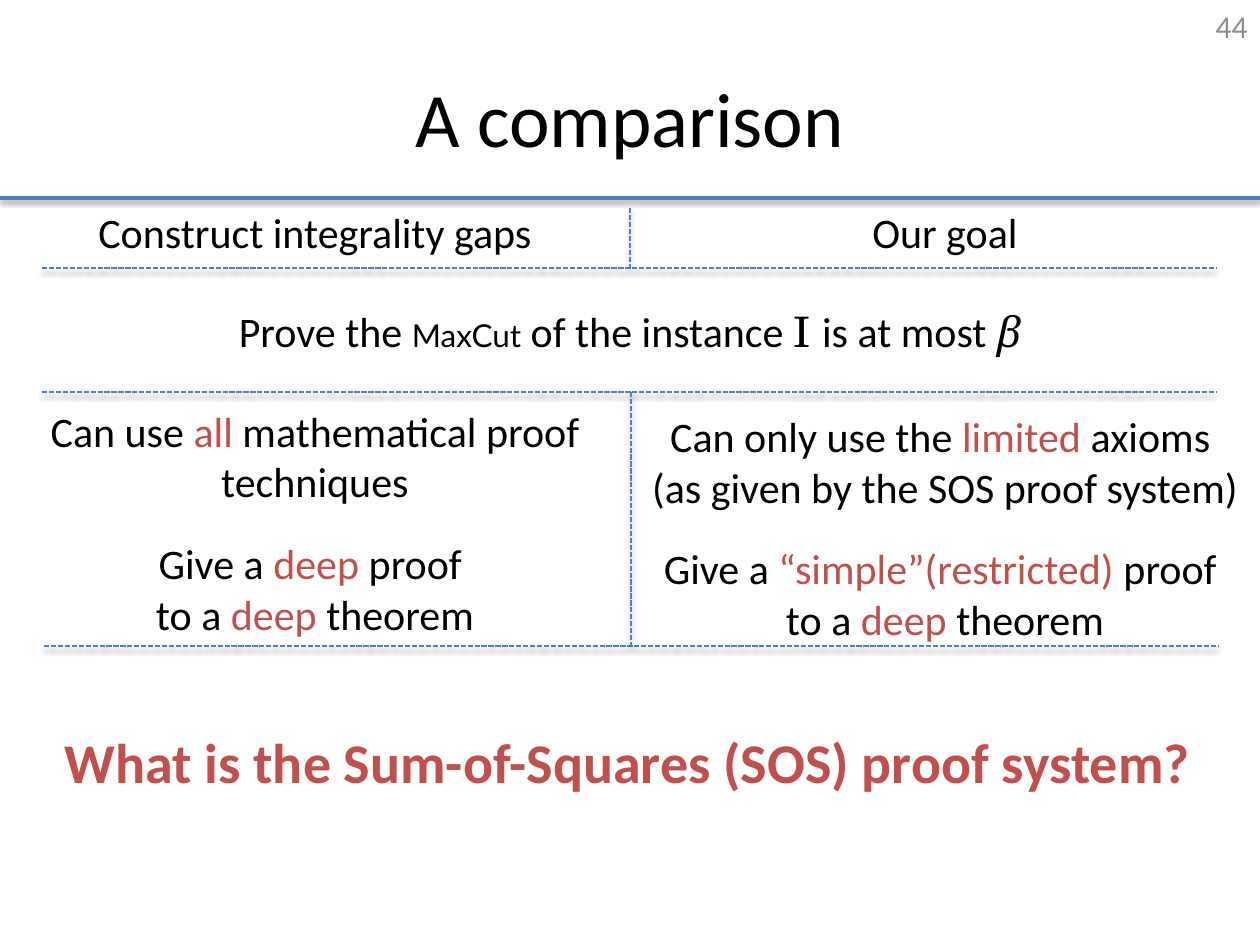
"""Build the slide that compares integrality gaps with our goal."""
from lxml import etree
from pptx import Presentation
from pptx.dml.color import RGBColor
from pptx.enum.dml import MSO_LINE
from pptx.enum.shapes import MSO_CONNECTOR
from pptx.enum.text import MSO_ANCHOR, PP_ALIGN
from pptx.oxml import parse_xml
from pptx.oxml.ns import nsdecls
from pptx.util import Pt

PX = 914400 // 126
DASH = MSO_LINE.SQUARE_DOT
STRAIGHT = MSO_CONNECTOR.STRAIGHT
TOP, MIDDLE = MSO_ANCHOR.TOP, MSO_ANCHOR.MIDDLE
CENTER, RIGHT = PP_ALIGN.CENTER, PP_ALIGN.RIGHT
COLORS = {"ink": "000000", "red": "C0504D", "blue": "4F81BD", "gray": "8C8C8C"}
SHADOW = (
    f'<a:effectLst {nsdecls("a")}><a:outerShdw blurRad="40000" dist="20000" '
    'dir="5400000" rotWithShape="0"><a:srgbClr val="000000">'
    '<a:alpha val="38000"/></a:srgbClr></a:outerShdw></a:effectLst>'
)


def add_text(box, paras, size=24, align=CENTER, anchor=TOP):
    frame = slide.shapes.add_textbox(*[n * PX for n in box]).text_frame
    frame.word_wrap = True
    frame.vertical_anchor = anchor
    for i, (gap, runs) in enumerate(paras):
        para = frame.paragraphs[0] if i == 0 else frame.add_paragraph()
        para.alignment = align
        para.space_before = Pt(gap)
        for text, color, *face in runs:
            run = para.add_run()
            run.text = text
            run.font.size = Pt(face[1] if face else size)
            run.font.name = face[0] if face else "Calibri"
            run.font.color.rgb = RGBColor.from_string(COLORS[color])
    return frame


def add_rule(ends, width=1, dash=DASH):
    rule = slide.shapes.add_connector(STRAIGHT, *[n * PX for n in ends])
    rule.line.color.rgb = RGBColor.from_string(COLORS["blue"])
    rule.line.width = Pt(width)
    rule.line.dash_style = dash
    rule._element.spPr.append(parse_xml(SHADOW))


deck = Presentation()
deck.slide_width, deck.slide_height = 1260 * PX, 945 * PX
slide = deck.slides.add_slide(deck.slide_layouts[6])

add_rule((0, 198, 1260, 198), 2, MSO_LINE.SOLID)
add_text((63, 38, 1134, 158), [(0, [("A comparison", "ink")])], 44, anchor=MIDDLE)

theorem = (0, [("to a ", "ink"), ("deep", "red"), (" theorem", "ink")])
left = [
    (0, [("Construct integrality gaps", "ink")]),
    (85, [("Can use ", "ink"), ("all", "red"),
          (" mathematical proof techniques", "ink")]),
    (18, [("Give a ", "ink"), ("deep", "red"), (" proof ", "ink")]),
    theorem,
]
right = [
    (0, [("Our goal", "ink")]),
    (88, [("Can only use the ", "ink"), ("limited", "red"), (" axioms ", "ink")]),
    (0, [("(as given by the SOS proof system)", "ink")]),
    (18, [("Give a ", "ink"), ("“simple”(restricted)", "red"), (" proof ", "ink")]),
    theorem,
]
for x, paras in ((0, left), (630, right)):
    add_text((x, 200, 630, 450), paras)

for ends in (
    (42, 268, 1216, 268), (630, 208, 630, 267), (44, 646, 1218, 646),
    (42, 392, 1216, 392), (631, 392, 631, 646),
):
    add_rule(ends)

ask = add_text((-2, 721, 1260, 81),
               [(0, [("What is the Sum-of-Squares (SOS) proof system?", "red")])], 32)
ask.paragraphs[0].runs[0].font.bold = True

add_text((966, 1, 294, 50), [(0, [("44", "gray")])], 18, RIGHT, MIDDLE)

claim = add_text((93, 299, 1074, 63), [(0, [
    ("Prove the ", "ink"), ("MaxCut", "ink", "Lato", 18),
    (" of the instance ", "ink"), ("I ", "ink", "TeX Gyre Schola", 24),
    ("is at most ", "ink"), ("β", "ink", "Cambria", 24),
])])
claim.paragraphs[0].runs[-1].font.italic = True

deck.save("out.pptx")
